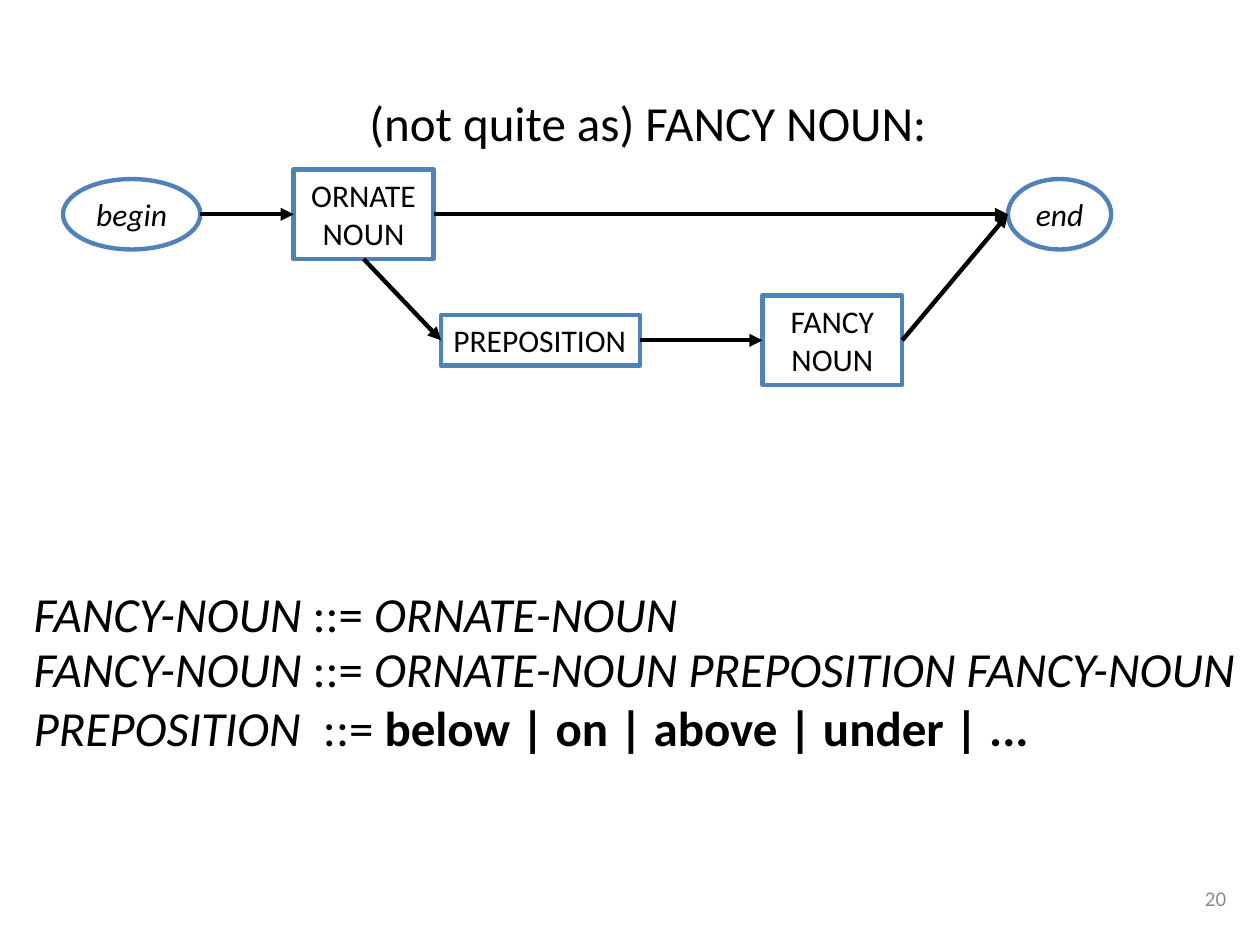
from lxml.etree import SubElement
from pptx import Presentation
from pptx.dml.color import RGBColor
from pptx.enum.shapes import MSO_CONNECTOR, MSO_SHAPE
from pptx.enum.text import MSO_ANCHOR, MSO_AUTO_SIZE, PP_ALIGN
from pptx.oxml.ns import qn
from pptx.util import Cm, Pt

COLORS = {"text": "000000", "outline": "4F81BD", "number": "8C8C8C"}


def color(key):
    return RGBColor.from_string(COLORS[key])


def style(paragraph, size, align=PP_ALIGN.LEFT, key="text"):
    paragraph.alignment = align
    paragraph.font.name = "Calibri"
    paragraph.font.size = Pt(size)
    paragraph.font.color.rgb = color(key)


prs = Presentation()
prs.slide_width, prs.slide_height = Cm(25.4), Cm(19.05)
slide = prs.slides.add_slide(prs.slide_layouts[5])
shapes = slide.shapes

title = shapes.title
title.left, title.top, title.width, title.height = Cm(7.19), Cm(1.73), Cm(11.89), Cm(1.45)
title.text_frame.text = "(not quite as) FANCY NOUN:"
title.text_frame.word_wrap = False
title.text_frame.auto_size = MSO_AUTO_SIZE.NONE
title.text_frame.vertical_anchor = MSO_ANCHOR.TOP
style(title.text_frame.paragraphs[0], 28)

page_number = shapes.add_textbox(Cm(19.05), Cm(17.6), Cm(5.92), Cm(1.02)).text_frame
page_number.text = "20"
page_number.word_wrap = True
page_number.vertical_anchor = MSO_ANCHOR.MIDDLE
style(page_number.paragraphs[0], 12, PP_ALIGN.RIGHT, "number")

upper, lower = 4.32, 6.86
steps = [
    ("begin", "begin", MSO_SHAPE.OVAL, 1.27, upper, 2.77, 1.42),
    ("ornate", "ORNATE NOUN", MSO_SHAPE.RECTANGLE, 5.92, upper, 2.82, 1.8),
    ("preposition", "PREPOSITION", MSO_SHAPE.RECTANGLE, 8.89, lower, 4.01, 1.02),
    ("fancy", "FANCY\nNOUN", MSO_SHAPE.RECTANGLE, 15.37, lower, 2.82, 1.8),
    ("end", "end", MSO_SHAPE.OVAL, 20.32, upper, 2.08, 1.42),
]
sides = {}
for key, label, outline, left, middle, width, height in steps:
    step = shapes.add_shape(outline, Cm(left), Cm(middle - height / 2), Cm(width), Cm(height))
    step.shadow.inherit = False
    step.fill.background()
    step.line.color.rgb = color("outline")
    step.line.width = Pt(2.5)
    frame = step.text_frame
    frame.text = label
    frame.word_wrap = key == "ornate"
    frame.vertical_anchor = MSO_ANCHOR.MIDDLE
    for paragraph in frame.paragraphs:
        style(paragraph, 18, PP_ALIGN.LEFT if key == "preposition" else PP_ALIGN.CENTER)
        paragraph.font.italic = outline == MSO_SHAPE.OVAL
    sides[key] = {
        "left": (left, middle),
        "right": (left + width, middle),
        "bottom": (left + width / 2, middle + height / 2),
    }

for source, side, target in [
    ("begin", "right", "ornate"),
    ("ornate", "right", "end"),
    ("ornate", "bottom", "preposition"),
    ("preposition", "right", "fancy"),
    ("fancy", "right", "end"),
]:
    ends = sides[source][side] + sides[target]["left"]
    arrow = shapes.add_connector(MSO_CONNECTOR.STRAIGHT, *map(Cm, ends))
    arrow.line.color.rgb = color("text")
    arrow.line.width = Pt(2.5)
    SubElement(arrow.line._get_or_add_ln(), qn("a:tailEnd"), type="triangle")
    SubElement(arrow._element.spPr, qn("a:effectLst"))

grammar = [
    (11.63, 13.72, 1.45, [("FANCY-NOUN ", "::= ", "ORNATE-NOUN")]),
    (12.75, 25.12, 2.64, [
        ("FANCY-NOUN ", "::= ", "ORNATE-NOUN PREPOSITION FANCY-NOUN"),
        ("PREPOSITION ", " ::= ", "below | on | above | under | ..."),
    ]),
]
for top, width, height, rules in grammar:
    frame = shapes.add_textbox(Cm(0.43), Cm(top), Cm(width), Cm(height)).text_frame
    frame.word_wrap = False
    for index, rule in enumerate(rules):
        paragraph = frame.add_paragraph() if index else frame.paragraphs[0]
        style(paragraph, 28)
        name, sign, expansion = [paragraph.add_run() for _ in rule]
        name.text, sign.text, expansion.text = rule
        terminal = "|" in expansion.text
        name.font.italic = True
        expansion.font.italic = not terminal
        expansion.font.bold = terminal

prs.save("out.pptx")
